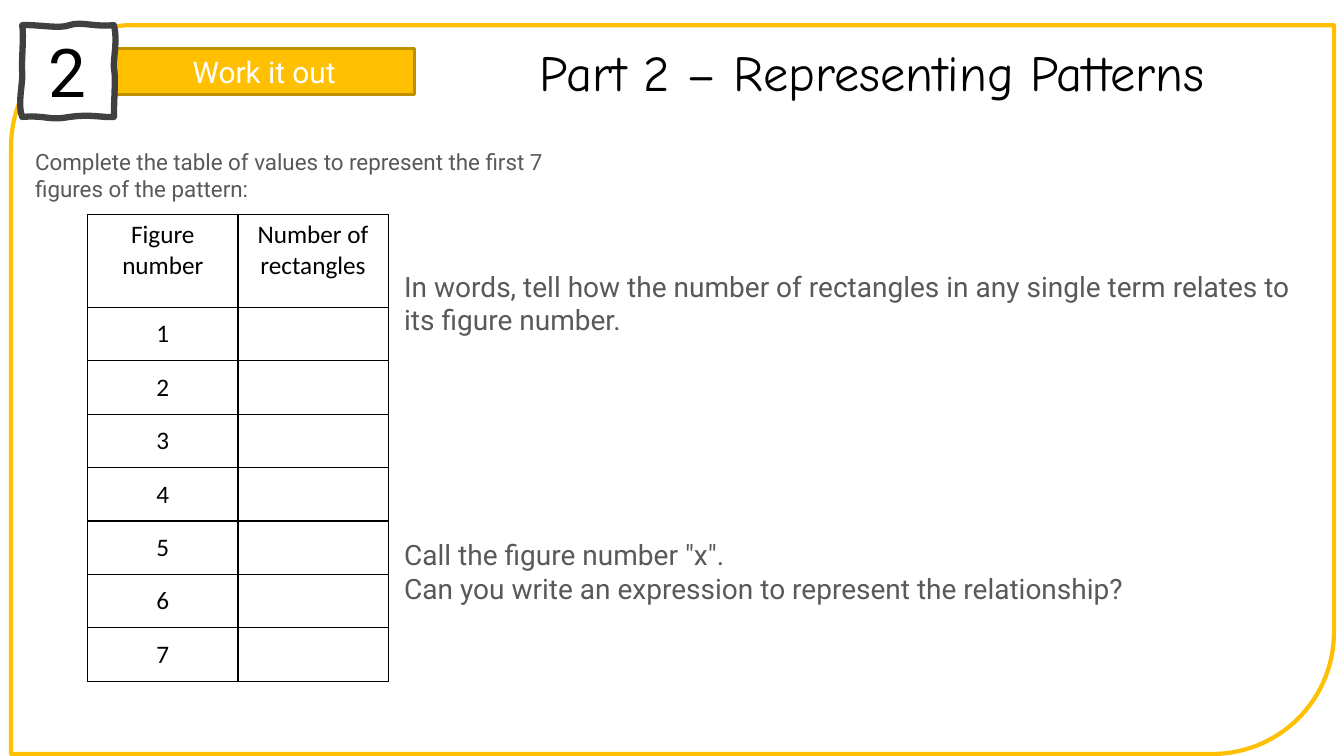
import pptx
import pptx.util
import pptx.dml.color
import pptx.enum.shapes
import pptx.enum.text
import pptx.oxml
import pptx.oxml.ns

Inches, Pt = pptx.util.Inches, pptx.util.Pt
RGBColor = pptx.dml.color.RGBColor
SHAPE = pptx.enum.shapes.MSO_SHAPE
ALIGN = pptx.enum.text.PP_ALIGN
ANCHOR = pptx.enum.text.MSO_ANCHOR

GOLD = RGBColor(0xFF, 0xC0, 0x01)
DARK_GOLD = RGBColor(0xBF, 0x90, 0x00)
CHARCOAL = RGBColor(0x40, 0x40, 0x40)
GREY = RGBColor(0x59, 0x59, 0x59)
BLACK = RGBColor(0, 0, 0)
WHITE = RGBColor(0xFF, 0xFF, 0xFF)

# Sketched square: start point, then cubic curves (two controls and an end)
BADGE_START = (0.22, 0.25)
BADGE_CURVES = [
    ((0.36, 0.24), (0.59, 0.29), (0.69, 0.25)),
    ((0.80, 0.21), (0.93, 0.27), (1.13, 0.25)),
    ((1.17, 0.40), (1.12, 0.59), (1.13, 0.68)),
    ((1.15, 0.77), (1.13, 0.95), (1.13, 1.16)),
    ((1.03, 1.17), (0.90, 1.13), (0.69, 1.16)),
    ((0.49, 1.20), (0.45, 1.14), (0.22, 1.16)),
    ((0.17, 1.04), (0.23, 0.82), (0.22, 0.72)),
    ((0.21, 0.62), (0.24, 0.35), (0.22, 0.25)),
]


def curve_points(start, curves, steps=8):
    """Return points along a chain of cubic Bezier curves."""
    points = []
    for c1, c2, end in curves:
        for i in range(1, steps + 1):
            t = i / steps
            u = 1 - t
            points.append(tuple(
                Inches(u**3 * a + 3 * u * u * t * b + 3 * u * t * t * c + t**3 * d)
                for a, b, c, d in zip(start, c1, c2, end)))
        start = end
    return points


class Worksheet:
    """Holds the slide and its text style."""
    font = "Roboto"

    def __init__(self, prs):
        self.s = prs.slides.add_slide(prs.slide_layouts[5])

    def fill_text(self, tf, lines, size, color, align=ALIGN.LEFT, anchor=ANCHOR.TOP,
                  font=None, gap=None):
        """Fill a text frame; gap maps a line index to its space before."""
        tf.word_wrap = True
        tf.vertical_anchor = anchor
        for i, line in enumerate(lines):
            p = tf.paragraphs[0] if i == 0 else tf.add_paragraph()
            p.alignment = align
            if gap and i in gap:
                p.space_before = Pt(gap[i])
            self.add_run(p, line, size, color, font or self.font)

    def add_run(self, p, text, size, color, font):
        r = p.add_run()
        r.text = text
        r.font.name = font
        r.font.size = Pt(size)
        r.font.bold = False
        r.font.color.rgb = color

    def paint(self, sp, fill, line, width):
        sp.shadow.inherit = False
        if fill is None:
            sp.fill.background()
        else:
            sp.fill.solid()
            sp.fill.fore_color.rgb = fill
        sp.line.color.rgb = line
        sp.line.width = Pt(width)
        return sp

    def title(self, text, box):
        sp = self.s.shapes.title
        sp.left, sp.top, sp.width, sp.height = map(Inches, box)
        self.fill_text(sp.text_frame, [text], 36, BLACK, ALIGN.CENTER, ANCHOR.MIDDLE,
                       "Comic Neue")

    def shape(self, kind, box, fill, line, width):
        sp = self.s.shapes.add_shape(kind, *map(Inches, box))
        return self.paint(sp, fill, line, width)

    def badge(self, text):
        fb = self.s.shapes.build_freeform(*map(Inches, BADGE_START))
        fb.add_line_segments(curve_points(BADGE_START, BADGE_CURVES), close=True)
        sp = self.paint(fb.convert_to_shape(), WHITE, CHARCOAL, 4.5)
        self.fill_text(sp.text_frame, [text], 48, BLACK, ALIGN.CENTER, ANCHOR.MIDDLE)

    def text(self, lines, box, size, gap=None):
        sp = self.s.shapes.add_textbox(*map(Inches, box))
        self.fill_text(sp.text_frame, lines, size, GREY, gap=gap)

    def border(self, cell):
        tcPr = cell._tc.get_or_add_tcPr()
        for side in ("lnL", "lnR", "lnT", "lnB"):
            tcPr.append(pptx.oxml.parse_xml(
                f'<a:{side} {pptx.oxml.ns.nsdecls("a")} w="{Pt(1)}"><a:solidFill>'
                f'<a:srgbClr val="{BLACK}"/></a:solidFill></a:{side}>'))

    def table(self, rows, box, head_height, row_height):
        frame = self.s.shapes.add_table(len(rows), len(rows[0]), *map(Inches, box))
        tbl = frame.table
        for i, row in enumerate(rows):
            tbl.rows[i].height = Inches(row_height if i else head_height)
            for j, value in enumerate(row):
                cell = tbl.cell(i, j)
                self.border(cell)
                cell.fill.background()
                cell.vertical_anchor = ANCHOR.MIDDLE if i else ANCHOR.TOP
                if value:
                    p = cell.text_frame.paragraphs[0]
                    p.alignment = ALIGN.CENTER
                    self.add_run(p, value, 18, BLACK, "Calibri")


def main():
    prs = pptx.Presentation()
    prs.slide_width, prs.slide_height = Inches(13.33), Inches(7.5)
    sheet = Worksheet(prs)

    sheet.shape(SHAPE.ROUND_2_DIAG_RECTANGLE, (0.11, 0.25, 13.12, 7.23), None, GOLD, 3)
    label = sheet.shape(SHAPE.RECTANGLE, (1.13, 0.48, 2.98, 0.46), GOLD, DARK_GOLD, 2.25)
    sheet.fill_text(label.text_frame, ["Work it out"], 21.3, WHITE, ALIGN.CENTER,
                    ANCHOR.MIDDLE)
    sheet.badge("2")

    sheet.text(["In words, tell how the number of rectangles in any single term "
                "relates to its figure number.",
                'Call the figure number "x".',
                "Can you write an expression to represent the relationship?"],
               (3.91, 2.62, 9.32, 3.47), 20, gap={1: 144})
    rows = [("Figure number", "Number of rectangles")]
    rows += [(str(n), "") for n in range(1, 8)]
    sheet.table(rows, (0.87, 2.13, 2.98, 4.64), 0.92, 0.53)
    sheet.text(["Complete the table of values to represent the first 7 figures "
                "of the pattern:"], (0.25, 1.42, 5.51, 0.64), 16)
    sheet.title("Part 2 – Representing Patterns", (4.18, 0.35, 8.94, 0.71))

    prs.save("out.pptx")


if __name__ == "__main__":
    main()
